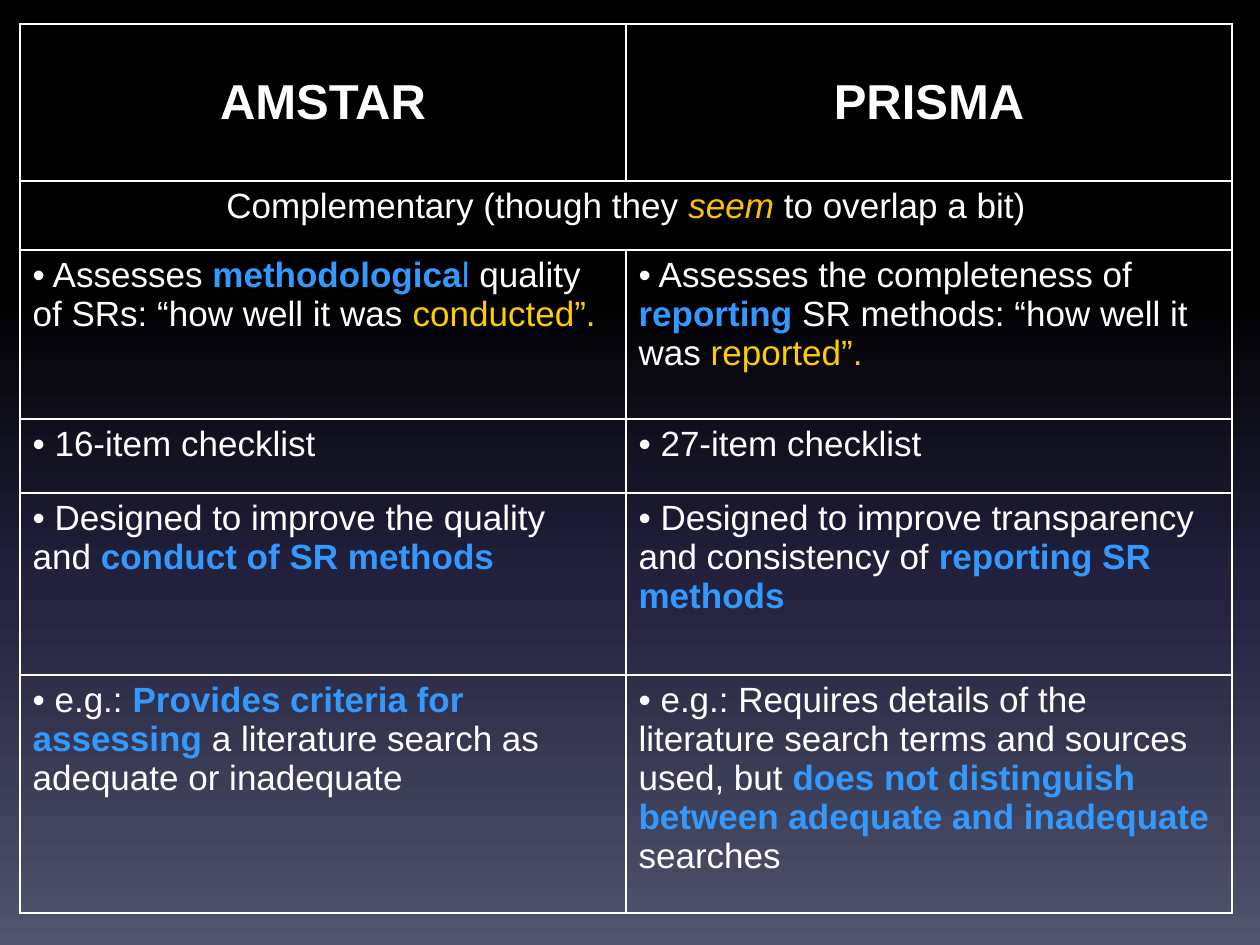
from dataclasses import dataclass

from lxml import etree
from pptx import Presentation
from pptx.dml.color import RGBColor
from pptx.enum.text import MSO_ANCHOR, PP_ALIGN
from pptx.oxml.ns import qn
from pptx.util import Emu, Pt

CENTER, LEFT = PP_ALIGN.CENTER, PP_ALIGN.LEFT
MIDDLE, TOP = MSO_ANCHOR.MIDDLE, MSO_ANCHOR.TOP
EMU_PER_PX = 914400 / 126


def px(length):
    return Emu(round(length * EMU_PER_PX))


@dataclass(frozen=True)
class Theme:
    font: str = "Arial"
    heading_size: int = 28
    body_size: int = 20
    white: str = "FFFFFF"
    blue: str = "3399FF"
    amber: str = "FFC000"
    yellow: str = "FFCC00"
    border_width: int = 1
    backdrop: tuple = ((0, "000000"), (31, "000000"), (62, "23213E"), (100, "50546C"))


@dataclass(frozen=True)
class Span:
    text: str
    color: str = Theme.white
    bold: bool = False
    italic: bool = False


def key(text):
    return Span(text, Theme.blue, bold=True)


def accent(text):
    return Span(text, Theme.yellow)


def add_color(parent, color):
    etree.SubElement(parent, qn("a:srgbClr"), val=color)


class SlideBuilder:
    def __init__(self, page, theme):
        self.page = page
        self.theme = theme

    def background(self):
        fill = self.page.background.fill
        fill.gradient()
        fill.gradient_angle = 270
        stops = self.page.element.find(".//" + qn("a:gsLst"))
        for stop in list(stops):
            stops.remove(stop)
        for percent, color in self.theme.backdrop:
            add_color(etree.SubElement(stops, qn("a:gs"), pos=str(percent * 1000)), color)

    def table(self, left, top, column_widths, row_heights):
        frame = self.page.shapes.add_table(
            len(row_heights), len(column_widths), px(left), px(top),
            px(sum(column_widths)), px(sum(row_heights)))
        table = frame.table
        table.first_row = table.horz_banding = False
        for column, width in zip(table.columns, column_widths):
            column.width = px(width)
        for row, height in zip(table.rows, row_heights):
            row.height = px(height)
        for cell in table.iter_cells():
            self.borders(cell)
            cell.fill.background()
        return table

    def borders(self, cell):
        properties = cell._tc.get_or_add_tcPr()
        for side in ("a:lnL", "a:lnR", "a:lnT", "a:lnB"):
            line = etree.SubElement(properties, qn(side), w=str(Pt(self.theme.border_width)))
            add_color(etree.SubElement(line, qn("a:solidFill")), self.theme.white)

    def text(self, cell, spans, size, align=LEFT, anchor=TOP, bullet=False):
        cell.vertical_anchor = anchor
        para = cell.text_frame.paragraphs[0]
        para.alignment = align
        if bullet:
            self.bullet(para)
        for span in spans:
            run = para.add_run()
            run.text = span.text
            run.font.name = self.theme.font
            run.font.size = Pt(size)
            run.font.bold = span.bold
            run.font.italic = span.italic
            run.font.color.rgb = RGBColor.from_string(span.color)

    def bullet(self, para):
        properties = para._p.get_or_add_pPr()
        properties.set("marL", "0")
        properties.set("indent", str(-px(18)))
        add_color(etree.SubElement(properties, qn("a:buClr")), self.theme.white)
        etree.SubElement(properties, qn("a:buFont"), typeface=self.theme.font)
        etree.SubElement(properties, qn("a:buChar"), char="•")


HEADINGS = ("AMSTAR", "PRISMA")
SUMMARY = (
    Span("Complementary (though they "),
    Span("seem", Theme.amber, italic=True),
    Span(" to overlap a bit)"),
)
COMPARISONS = (
    ((Span(" Assesses "), key("methodologica"), Span("l", Theme.blue),
      Span(" quality of SRs: “how well it was "), accent("conducted”.")),
     (Span(" Assesses the completeness of "), key("reporting"),
      Span(" SR methods: “how well it was"), accent(" reported”."))),
    ((Span(" 16-item checklist"),),
     (Span(" 27-item checklist"),)),
    ((Span(" Designed to improve the quality and "), key("conduct of SR methods")),
     (Span(" Designed to improve transparency and consistency of "),
      key("reporting SR methods"))),
    ((Span(" e.g.: "), key("Provides criteria for assessing "),
      Span("a literature search as adequate or inadequate")),
     (Span(" e.g.: Requires details of the literature search terms and sources used, but "),
      key("does not distinguish between adequate and inadequate"), Span(" searches"))),
)


def main():
    deck = Presentation()
    deck.slide_width, deck.slide_height = px(1260), px(945)
    theme = Theme()
    builder = SlideBuilder(deck.slides.add_slide(deck.slide_layouts[6]), theme)
    builder.background()

    table = builder.table(20, 24, (606, 606), (157, 69, 169, 74, 182, 238))
    for column, heading in enumerate(HEADINGS):
        builder.text(table.cell(0, column), [Span(heading, bold=True)],
                     theme.heading_size, CENTER, MIDDLE)
    table.cell(1, 0).merge(table.cell(1, 1))
    builder.text(table.cell(1, 0), SUMMARY, theme.body_size, CENTER)
    for row, comparison in enumerate(COMPARISONS, start=2):
        for column, spans in enumerate(comparison):
            builder.text(table.cell(row, column), spans, theme.body_size, bullet=True)

    deck.save("out.pptx")


if __name__ == "__main__":
    main()
